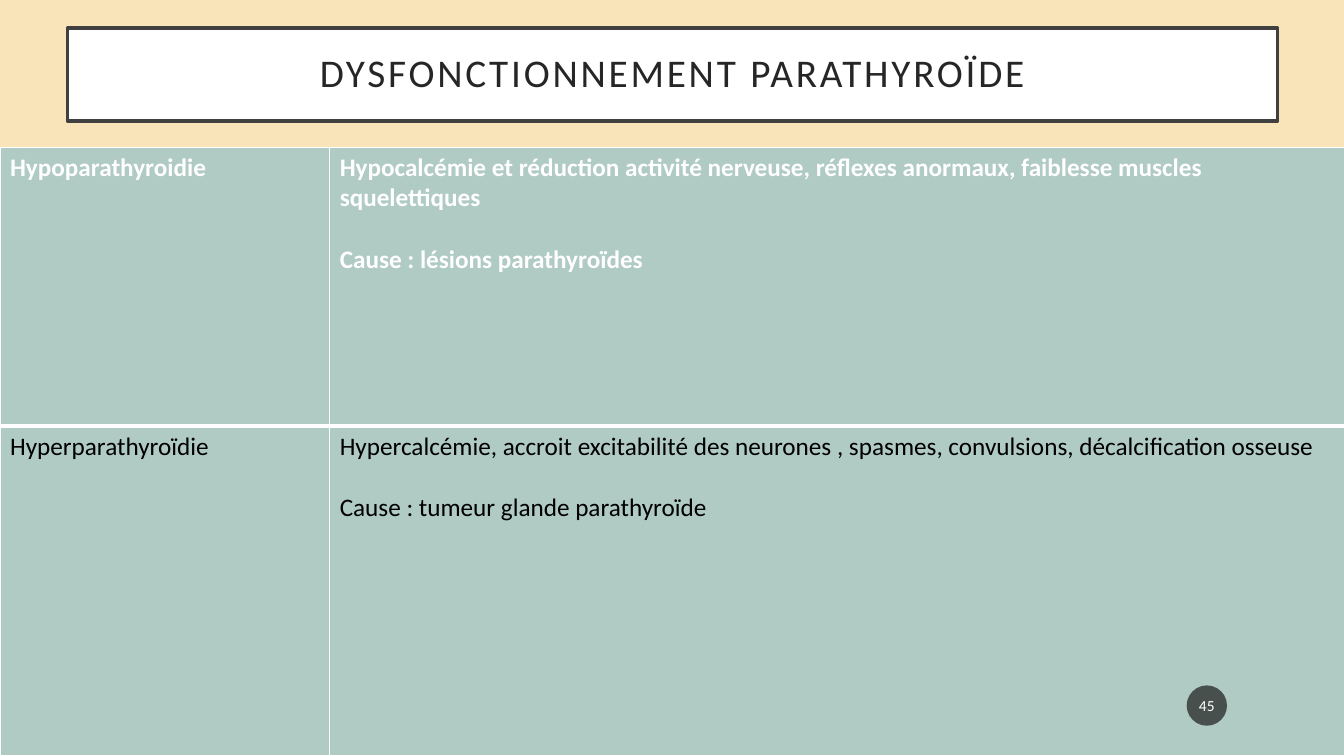
"""Build the slide on parathyroid dysfunction."""
from dataclasses import dataclass

from lxml.etree import SubElement
from pptx import Presentation
from pptx.dml.color import RGBColor
from pptx.dml.fill import FillFormat
from pptx.enum.shapes import MSO_SHAPE
from pptx.enum.text import MSO_ANCHOR, PP_ALIGN
from pptx.oxml import parse_xml
from pptx.oxml.ns import nsdecls, qn
from pptx.slide import Slide
from pptx.table import _Cell
from pptx.text.text import TextFrame, _Paragraph
from pptx.util import Inches, Pt

FONT = "Calibri"
WHITE = "FFFFFF"
COLUMN_WIDTHS = (3.27, 10.07)


@dataclass(frozen=True)
class Disorder:
    name: str
    effects: str
    cause: str
    height: float
    color: str
    bold: bool
    top_border: float
    bottom_border: float


DISORDERS = (
    Disorder(
        "Hypoparathyroidie",
        "Hypocalcémie et réduction activité nerveuse, réflexes anormaux, "
        "faiblesse muscles squelettiques",
        "Cause : lésions parathyroïdes",
        2.77, WHITE, True, 1, 3,
    ),
    Disorder(
        "Hyperparathyroïdie",
        "Hypercalcémie, accroit excitabilité des neurones , spasmes, "
        "convulsions, décalcification osseuse",
        "Cause : tumeur glande parathyroïde",
        3.27, "000000", False, 3, 1,
    ),
)


def paint(fill: FillFormat, color: str) -> None:
    fill.solid()
    fill.fore_color.rgb = RGBColor.from_string(color)


def style(para: _Paragraph, size: float, color: str, bold: bool = False) -> None:
    para.font.name = FONT
    para.font.size = Pt(size)
    para.font.bold = bold
    para.font.color.rgb = RGBColor.from_string(color)


def set_margins(frame: TextFrame, horizontal: float, vertical: float) -> None:
    frame.margin_left = frame.margin_right = Inches(horizontal)
    frame.margin_top = frame.margin_bottom = Inches(vertical)


def add_title(page: Slide) -> None:
    title = page.shapes.title
    title.left, title.top = Inches(0.67), Inches(0.28)
    title.width, title.height = Inches(12), Inches(0.92)
    paint(title.fill, WHITE)
    paint(title.line.fill, "404040")
    title.line.width = Pt(2.5)
    frame = title.text_frame
    frame.text = "DYSFONCTIONNEMENT PARATHYROÏDE"
    frame.vertical_anchor = MSO_ANCHOR.MIDDLE
    set_margins(frame, 0.2, 0.2)
    para = frame.paragraphs[0]
    para.alignment = PP_ALIGN.CENTER
    para.line_spacing = 0.9
    style(para, 28, "262626")
    para.runs[0]._r.get_or_add_rPr().set("spc", "200")


def add_borders(cell: _Cell, top: float, bottom: float) -> None:
    properties = cell._tc.get_or_add_tcPr()
    widths = {"lnL": 1, "lnR": 1, "lnT": top, "lnB": bottom}
    for position, (side, width) in enumerate(widths.items()):
        border = parse_xml(
            f'<a:{side} {nsdecls("a")} w="{Pt(width)}"><a:solidFill>'
            f'<a:srgbClr val="{WHITE}"/></a:solidFill></a:{side}>'
        )
        properties.insert(position, border)


def fill_cell(cell: _Cell, lines: tuple[str, ...], disorder: Disorder) -> None:
    paint(cell.fill, "B0CAC4")
    add_borders(cell, disorder.top_border, disorder.bottom_border)
    cell.text_frame.text = "\n".join(lines)
    for index, para in enumerate(cell.text_frame.paragraphs):
        style(para, 18, disorder.color, disorder.bold)
        if index:
            para.space_before = Pt(22)


def add_disorder_table(page: Slide) -> None:
    table = page.shapes.add_table(
        len(DISORDERS), len(COLUMN_WIDTHS),
        Inches(0), Inches(1.46), Inches(13.33), Inches(6.04),
    ).table
    table.first_row = table.horz_banding = False
    for column, width in zip(table.columns, COLUMN_WIDTHS):
        column.width = Inches(width)
    for index, disorder in enumerate(DISORDERS):
        table.rows[index].height = Inches(disorder.height)
        fill_cell(table.cell(index, 0), (disorder.name,), disorder)
        fill_cell(table.cell(index, 1), (disorder.effects, disorder.cause), disorder)


def add_page_number(page: Slide, number: str) -> None:
    badge = page.shapes.add_shape(
        MSO_SHAPE.OVAL, Inches(11.77), Inches(6.8), Inches(0.4), Inches(0.4)
    )
    badge.shadow.inherit = False
    badge.line.fill.background()
    paint(badge.fill, "1D1D1D")
    color = badge._element.spPr.find(qn("a:solidFill"))[0]
    SubElement(color, qn("a:alpha")).set("val", "70000")
    frame = badge.text_frame
    frame.text = number
    frame.vertical_anchor = MSO_ANCHOR.MIDDLE
    set_margins(frame, 0.02, 0.05)
    frame.paragraphs[0].alignment = PP_ALIGN.CENTER
    style(frame.paragraphs[0], 11, WHITE)


def main() -> None:
    deck = Presentation()
    deck.slide_width, deck.slide_height = Inches(13.33), Inches(7.5)
    page = deck.slides.add_slide(deck.slide_layouts.get_by_name("Title Only"))
    paint(page.background.fill, "F9E3B9")
    add_title(page)
    add_disorder_table(page)
    add_page_number(page, "45")
    deck.save("out.pptx")


if __name__ == "__main__":
    main()
